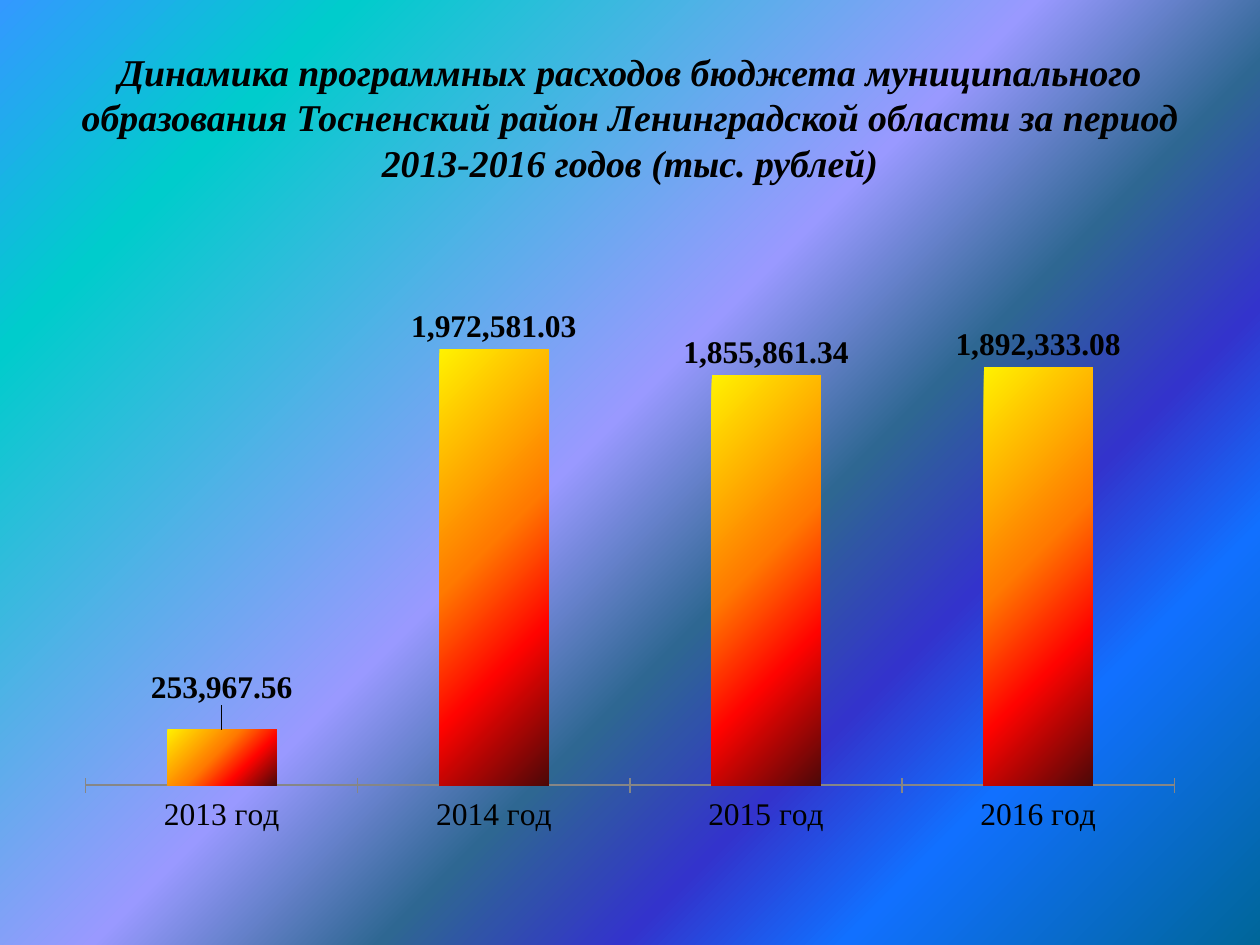
from lxml import etree
from pptx import Presentation
from pptx.chart.data import CategoryChartData
from pptx.dml.color import RGBColor
from pptx.enum.chart import XL_CHART_TYPE, XL_LABEL_POSITION, XL_TICK_MARK
from pptx.enum.text import MSO_ANCHOR, PP_ALIGN
from pptx.oxml.ns import qn
from pptx.util import Pt

COLUMNS = XL_CHART_TYPE.COLUMN_CLUSTERED
ABOVE = XL_LABEL_POSITION.OUTSIDE_END
CROSS, NO_TICK = XL_TICK_MARK.CROSS, XL_TICK_MARK.NONE
MIDDLE, CENTER = MSO_ANCHOR.MIDDLE, PP_ALIGN.CENTER

TITLE = ("Динамика программных расходов бюджета муниципального образования "
         "Тосненский район Ленинградской области за период 2013-2016 годов "
         "(тыс. рублей)")
SPENDING = {
    "2013 год": 253967.56,
    "2014 год": 1972581.03,
    "2015 год": 1855861.34,
    "2016 год": 1892333.08,
}
NUMBER_FORMAT = "#,##0.00"
AXIS_MAX = 2500000
FIRST_LABEL_SHIFT = -0.03  # share of the chart height

THEME = {
    "text": RGBColor.from_string("000000"),
    "axis": RGBColor.from_string("868686"),
    "serif": "Times New Roman",
    "sans": "Calibri",
    "title_size": Pt(21.6),
    "title_leading": Pt(26),
    "chart_size": Pt(18),
    "background": [(0, "3399FF"), (16, "00CCCC"), (47, "9999FF"), (60, "2E6792"),
                   (71, "3333CC"), (81, "1170FF"), (100, "006699")],
    "columns": [(0, "FFF200"), (45, "FF7A00"), (70, "FF0300"), (100, "4D0808")],
}

SLIDE_W, SLIDE_H = 720, 540
MARGIN = 36
CONTENT_W = SLIDE_W - 2 * MARGIN
TITLE_TOP, TITLE_H = 21.6, 90
CHART_TOP, CHART_H = 126, 356.4


def set_format(target, **values):
    for name, value in values.items():
        setattr(target, name, value)


def set_font(font, **values):
    set_format(font, **values)
    font.color.rgb = THEME["text"]


def set_gradient(fill, root, stops):
    """Fill with a diagonal gradient; root holds the fill's only stop list."""
    fill.gradient()
    fill.gradient_angle = 315
    stop_list = next(root.iter(qn("a:gsLst")))
    for old in list(stop_list):
        stop_list.remove(old)
    for percent, color in stops:
        stop = etree.SubElement(stop_list, qn("a:gs"), pos=str(percent * 1000))
        etree.SubElement(stop, qn("a:srgbClr"), val=color)


def shift_label(root, dy):
    """Move the only separately formatted data label by a share of the height."""
    label = next(root.iter(qn("c:dLbl")))
    for old in label.findall(qn("c:layout")):
        label.remove(old)
    layout = etree.Element(qn("c:layout"))
    manual = etree.SubElement(layout, qn("c:manualLayout"))
    for axis, value in (("x", 0), ("y", dy)):
        etree.SubElement(manual, qn("c:" + axis), val=str(value))
    label.insert(1, layout)


def add_title(s):
    box = s.shapes.add_textbox(Pt(MARGIN), Pt(TITLE_TOP), Pt(CONTENT_W), Pt(TITLE_H))
    tf = box.text_frame
    set_format(tf, word_wrap=True, vertical_anchor=MIDDLE)
    p = tf.paragraphs[0]
    set_format(p, alignment=CENTER, line_spacing=THEME["title_leading"])
    r = p.add_run()
    r.text = TITLE
    set_font(r.font, name=THEME["serif"], size=THEME["title_size"],
             bold=True, italic=True)


def add_spending_chart(s):
    data = CategoryChartData(number_format=NUMBER_FORMAT)
    data.categories = list(SPENDING)
    data.add_series("Series 1", list(SPENDING.values()))
    chart = s.shapes.add_chart(COLUMNS, Pt(MARGIN), Pt(CHART_TOP),
                               Pt(CONTENT_W), Pt(CHART_H), data).chart
    set_format(chart, has_legend=False, has_title=False)
    set_font(chart.font, name=THEME["sans"], size=THEME["chart_size"])

    set_format(chart.value_axis, visible=False, has_major_gridlines=False,
               minimum_scale=0, maximum_scale=AXIS_MAX)
    axis = chart.category_axis
    set_format(axis, major_tick_mark=CROSS, minor_tick_mark=NO_TICK)
    axis.format.line.color.rgb = THEME["axis"]
    set_font(axis.tick_labels.font, name=THEME["serif"], size=THEME["chart_size"])

    plot = chart.plots[0]
    set_format(plot, gap_width=150, vary_by_categories=False)
    series = plot.series[0]
    series.invert_if_negative = False
    root = chart.element
    set_gradient(series.format.fill, root, THEME["columns"])

    labels = series.data_labels
    set_format(labels, show_value=True, number_format=NUMBER_FORMAT,
               number_format_is_linked=False, position=ABOVE)
    first_label = series.points[0].data_label
    first_label.position = ABOVE
    for label in (labels, first_label):
        set_font(label.font, name=THEME["serif"], size=THEME["chart_size"], bold=True)
    shift_label(root, FIRST_LABEL_SHIFT)


def main():
    prs = Presentation()
    set_format(prs, slide_width=Pt(SLIDE_W), slide_height=Pt(SLIDE_H))
    s = prs.slides.add_slide(prs.slide_layouts[6])
    set_gradient(s.background.fill, s.element, THEME["background"])
    add_title(s)
    add_spending_chart(s)
    prs.save("out.pptx")


if __name__ == "__main__":
    main()
